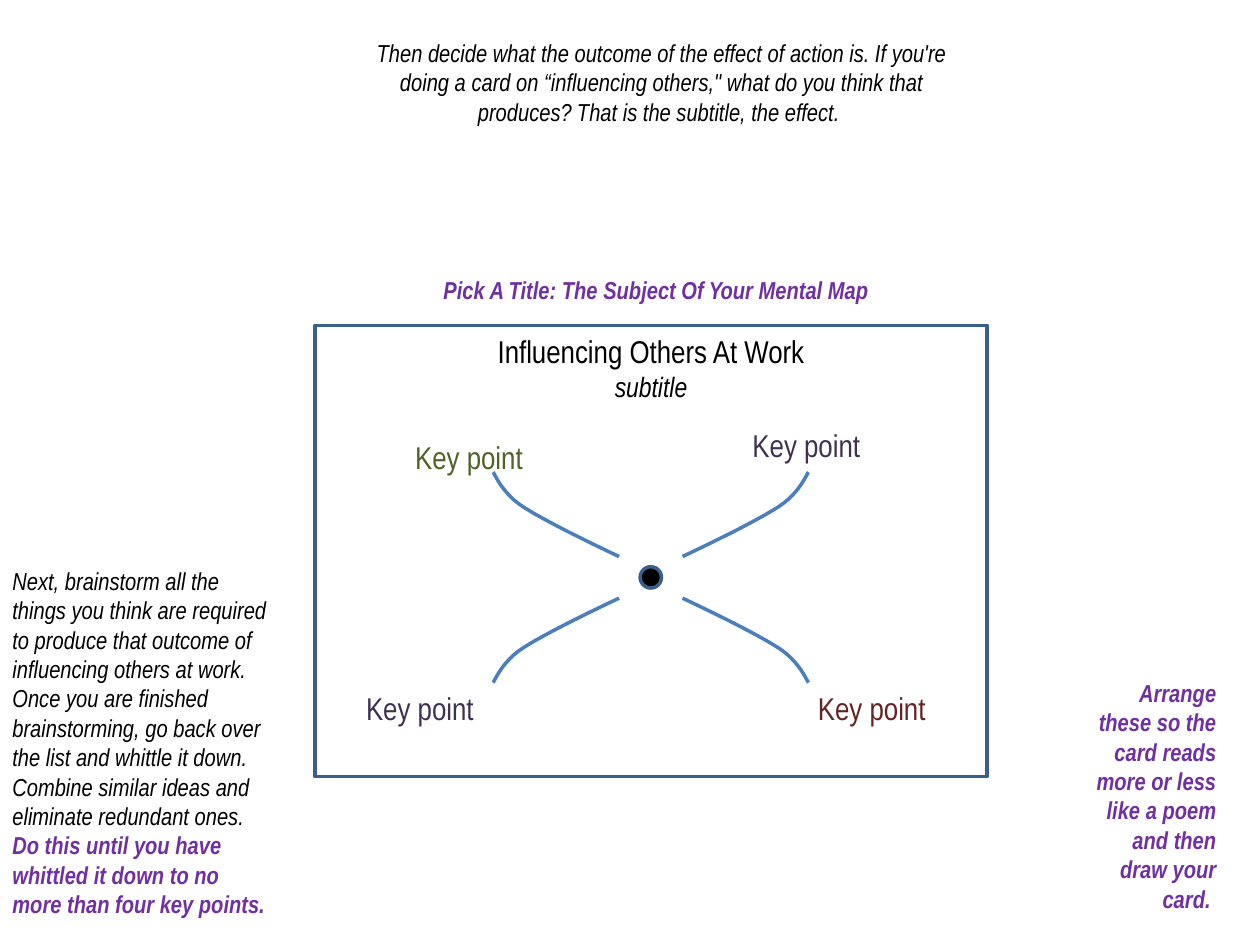
from pptx import Presentation
from pptx.dml.color import RGBColor
from pptx.enum.shapes import MSO_SHAPE
from pptx.enum.text import MSO_ANCHOR, MSO_AUTO_SIZE, PP_ALIGN
from pptx.util import Cm, Pt

FONT = "Arial Narrow"
BLACK, WHITE, PURPLE = "000000", "FFFFFF", "7030A0"
BORDER, BRANCH = "3A5F8C", "4B7EBC"
CENTER_X, CENTER_Y = 13.12, 11.64
DOT_SIZE = 0.43

# Bezier curves of one branch, in cm from the centre of the map
BRANCH_CURVES = [
    [(0.64, 0.42), (1.4, 0.78), (2.13, 1.14), (2.57, 1.42)],
    [(2.57, 1.42), (3.0, 1.69), (3.15, 2.1), (3.18, 2.12)],
]
CURVE_STEPS = 12

KEY_POINTS = [
    (14.78, 8.46, "403152"),
    (16.1, 13.77, "632523"),
    (6.99, 13.77, "403152"),
    (7.98, 8.71, "4F6228"),
]


def rgb(hex_color):
    return RGBColor.from_string(hex_color)


def style_font(font, size, color, bold=False, italic=False):
    font.name = FONT
    font.size = Pt(size)
    font.color.rgb = rgb(color)
    font.bold = bold
    font.italic = italic


def set_outline(shape, color):
    shape.line.color.rgb = rgb(color)
    shape.line.width = Pt(2)
    shape.shadow.inherit = False


def add_filled(slide, preset, left, top, width, height, fill):
    shape = slide.shapes.add_shape(
        preset, Cm(left), Cm(top), Cm(width), Cm(height))
    shape.fill.solid()
    shape.fill.fore_color.rgb = rgb(fill)
    set_outline(shape, BORDER)
    return shape


def add_note(slide, box, text, align=PP_ALIGN.LEFT, size=14, color=BLACK,
             bold=False, italic=True, wrap=True):
    note = slide.shapes.add_textbox(*(Cm(length) for length in box))
    frame = note.text_frame
    frame.word_wrap = wrap
    frame.auto_size = MSO_AUTO_SIZE.SHAPE_TO_FIT_TEXT
    paragraph = frame.paragraphs[0]
    paragraph.alignment = align
    paragraph.add_run().text = text
    style_font(paragraph.font, size, color, bold, italic)
    return paragraph


def curve_point(curve, t):
    weights = ((1 - t) ** 3, 3 * t * (1 - t) ** 2, 3 * t ** 2 * (1 - t), t ** 3)
    return tuple(sum(w * point[axis] for w, point in zip(weights, curve))
                 for axis in (0, 1))


def add_branch(slide, x_sign, y_sign):
    offsets = [BRANCH_CURVES[0][0]]
    for curve in BRANCH_CURVES:
        offsets += [curve_point(curve, step / CURVE_STEPS)
                    for step in range(1, CURVE_STEPS + 1)]
    points = [(Cm(CENTER_X + x_sign * x), Cm(CENTER_Y + y_sign * y))
              for x, y in offsets]
    builder = slide.shapes.build_freeform(*points[0])
    builder.add_line_segments(points[1:], close=False)
    branch = builder.convert_to_shape()
    branch.fill.background()
    set_outline(branch, BRANCH)


def add_card(slide):
    card = add_filled(slide, MSO_SHAPE.RECTANGLE, 6.35, 6.56, 13.55, 9.1, WHITE)
    frame = card.text_frame
    frame.word_wrap = True
    frame.vertical_anchor = MSO_ANCHOR.TOP
    title, subtitle = frame.paragraphs[0], frame.add_paragraph()
    title.text = "Influencing Others At Work"
    subtitle.text = "subtitle"
    style_font(title.font, 18, BLACK)
    style_font(subtitle.font, 16, BLACK, italic=True)
    title.alignment = subtitle.alignment = PP_ALIGN.CENTER


def main():
    deck = Presentation()
    deck.slide_width, deck.slide_height = Cm(25.4), Cm(19.05)
    slide = deck.slides.add_slide(deck.slide_layouts[6])

    # Card with the centre dot and four mirrored branches
    add_card(slide)
    add_filled(slide, MSO_SHAPE.OVAL, CENTER_X - DOT_SIZE / 2,
               CENTER_Y - DOT_SIZE / 2, DOT_SIZE, DOT_SIZE, BLACK)
    for y_sign in (1, -1):
        for x_sign in (1, -1):
            add_branch(slide, x_sign, y_sign)

    # Key points at the branch ends
    for left, top, color in KEY_POINTS:
        add_note(slide, (left, top, 2.95, 1.02), "Key point", PP_ALIGN.CENTER,
                 size=18, color=color, italic=False, wrap=False)

    # Instructions around the card
    add_note(slide, (6.99, 0.64, 12.7, 2.06),
             "Then decide what the outcome of the effect of action is. If "
             "you're doing a card on “influencing others,\" what do you think "
             "that produces? That is the subtitle, the effect. ",
             PP_ALIGN.CENTER)
    brainstorm = add_note(
        slide, (0, 11.28, 5.72, 7.44),
        "Next, brainstorm all the things you think are required to produce "
        "that outcome of influencing others at work. Once you are finished "
        "brainstorming, go back over the list and whittle it down. Combine "
        "similar ideas and eliminate redundant ones. ")
    whittle = brainstorm.add_run()
    whittle.text = ("Do this until you have whittled it down to no more than "
                    "four key points.")
    style_font(whittle.font, 14, PURPLE, bold=True, italic=True)
    add_note(slide, (21.59, 13.54, 3.18, 5.05),
             "Arrange these so the card reads more or less like a poem and "
             "then draw your card. ",
             PP_ALIGN.RIGHT, color=PURPLE, bold=True)
    add_note(slide, (8.69, 5.41, 9.17, 0.86),
             "Pick A Title: The Subject Of Your Mental Map",
             color=PURPLE, bold=True, wrap=False)

    deck.save("out.pptx")


if __name__ == "__main__":
    main()
